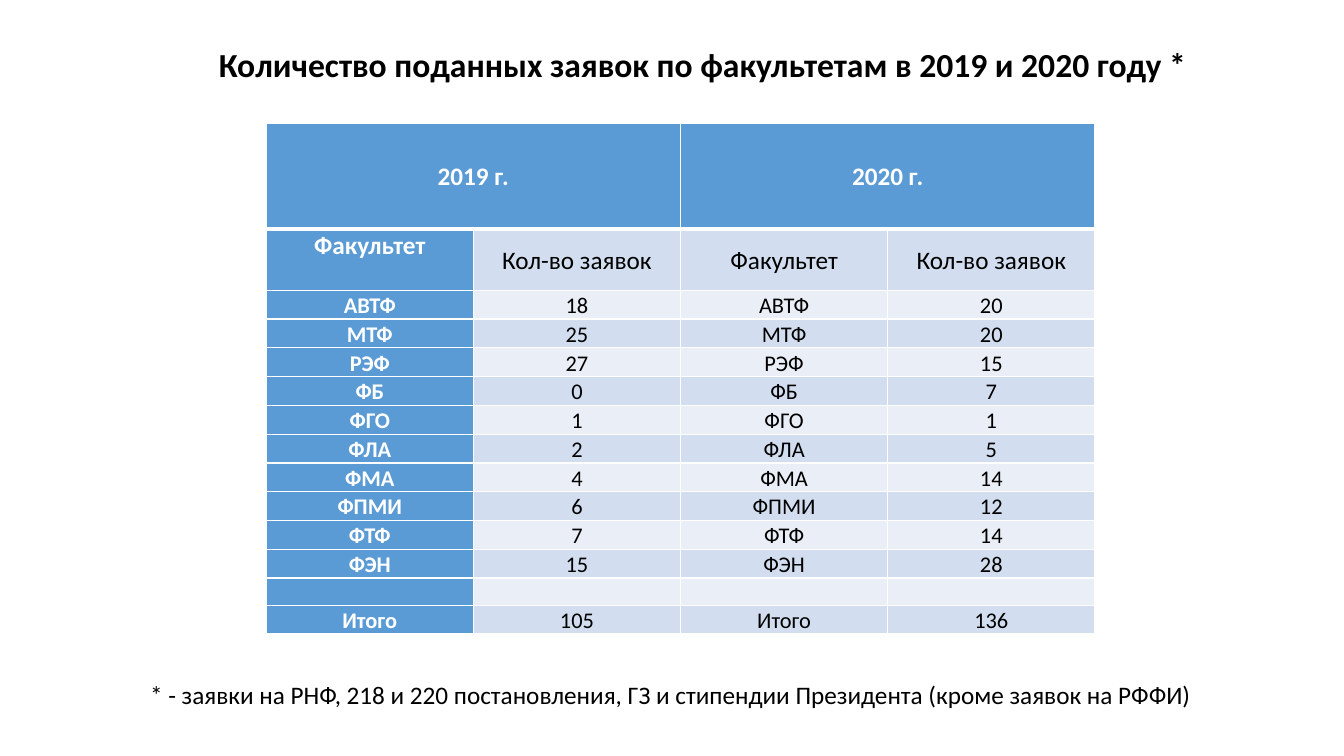
from lxml import etree
from pptx import Presentation
from pptx.dml.color import RGBColor
from pptx.enum.text import MSO_ANCHOR, MSO_AUTO_SIZE, PP_ALIGN
from pptx.oxml.ns import qn
from pptx.util import Inches, Pt

LEFT, CENTER = PP_ALIGN.LEFT, PP_ALIGN.CENTER
TOP, MIDDLE = MSO_ANCHOR.TOP, MSO_ANCHOR.MIDDLE
FIT_SHAPE = MSO_AUTO_SIZE.SHAPE_TO_FIT_TEXT
COLORS = {
    "header": "5B9BD5",
    "dark band": "D2DEEF",
    "light band": "EAEFF7",
    "white": "FFFFFF",
    "black": "000000",
}

FACULTIES = [
    ("АВТФ", 18, 20),
    ("МТФ", 25, 20),
    ("РЭФ", 27, 15),
    ("ФБ", 0, 7),
    ("ФГО", 1, 1),
    ("ФЛА", 2, 5),
    ("ФМА", 4, 14),
    ("ФПМИ", 6, 12),
    ("ФТФ", 7, 14),
    ("ФЭН", 15, 28),
]
rows = [
    ["2019 г.", "", "2020 г.", ""],
    ["Факультет", "Кол-во заявок"] * 2,
    *[[name, str(count_2019), name, str(count_2020)]
      for name, count_2019, count_2020 in FACULTIES],
    [""] * 4,
    ["Итого", "105", "Итого", "136"],
]


def write_text(text_frame, text, size, color, bold, alignment):
    text_frame.text = text
    paragraph = text_frame.paragraphs[0]
    paragraph.alignment = alignment
    for run in paragraph.runs:
        run.font.name = "Calibri"
        run.font.size = Pt(size)
        run.font.bold = bold
        run.font.color.rgb = RGBColor.from_string(COLORS[color])
    return paragraph


def add_border(cell, side, points):
    """Draw a white border; must run before the cell fill is set."""
    line = etree.SubElement(cell._tc.get_or_add_tcPr(), qn(f"a:{side}"), w=str(Pt(points)))
    fill = etree.SubElement(line, qn("a:solidFill"))
    etree.SubElement(fill, qn("a:srgbClr"), val=COLORS["white"])


presentation = Presentation()
presentation.slide_width = Inches(13.33)
presentation.slide_height = Inches(7.5)
slide = presentation.slides.add_slide(presentation.slide_layouts[5])

# Title and footnote
title = slide.shapes.title
title.left, title.top = Inches(2.07), Inches(0.39)
title.width, title.height = Inches(9.87), Inches(0.5)
footnote = slide.shapes.add_textbox(Inches(1.39), Inches(6.69), Inches(10.74), Inches(0.4))
for shape, text, size, bold in [
    (title, "Количество поданных заявок по факультетам в 2019 и 2020 году *", 24, True),
    (footnote, "* - заявки на РНФ, 218 и 220 постановления, ГЗ и стипендии Президента "
               "(кроме заявок на РФФИ)", 18, False),
]:
    write_text(shape.text_frame, text, size, "black", bold, LEFT)
    shape.text_frame.word_wrap = False
    shape.text_frame.auto_size = FIT_SHAPE
    shape.text_frame.vertical_anchor = TOP

# Applications table
table = slide.shapes.add_table(
    len(rows), 4, Inches(2.64), Inches(1.22), Inches(8.22), Inches(5.08)).table
table.first_col = True
for column in table.columns:
    column.width = Inches(2.055)
for row_index, row in enumerate(rows):
    table.rows[row_index].height = Inches({0: 1.05, 1: 0.61}.get(row_index, 0.27))
    for column_index, text in enumerate(row):
        cell = table.cell(row_index, column_index)
        is_header = row_index == 0 or column_index == 0
        size = 18 if row_index < 2 else 16
        paragraph = write_text(cell.text_frame, text, size,
                               "white" if is_header else "black", is_header, CENTER)
        paragraph.line_spacing = 1.07
        if not text:
            etree.SubElement(paragraph._p, qn("a:endParaRPr"), sz=str(size * 100))
        cell.margin_left = cell.margin_right = Inches(0.07)
        cell.margin_top = cell.margin_bottom = 0
        cell.vertical_anchor = TOP if (row_index, column_index) == (1, 0) else MIDDLE

        add_border(cell, "lnL", 1)
        add_border(cell, "lnR", 1)
        add_border(cell, "lnT", 3 if row_index == 1 else 1)
        add_border(cell, "lnB", 3 if row_index == 0 else 1)
        band = "dark band" if row_index % 2 else "light band"
        cell.fill.solid()
        cell.fill.fore_color.rgb = RGBColor.from_string(
            COLORS["header" if is_header else band])
for first_column in (0, 2):
    table.cell(0, first_column).merge(table.cell(0, first_column + 1))

presentation.save("out.pptx")
